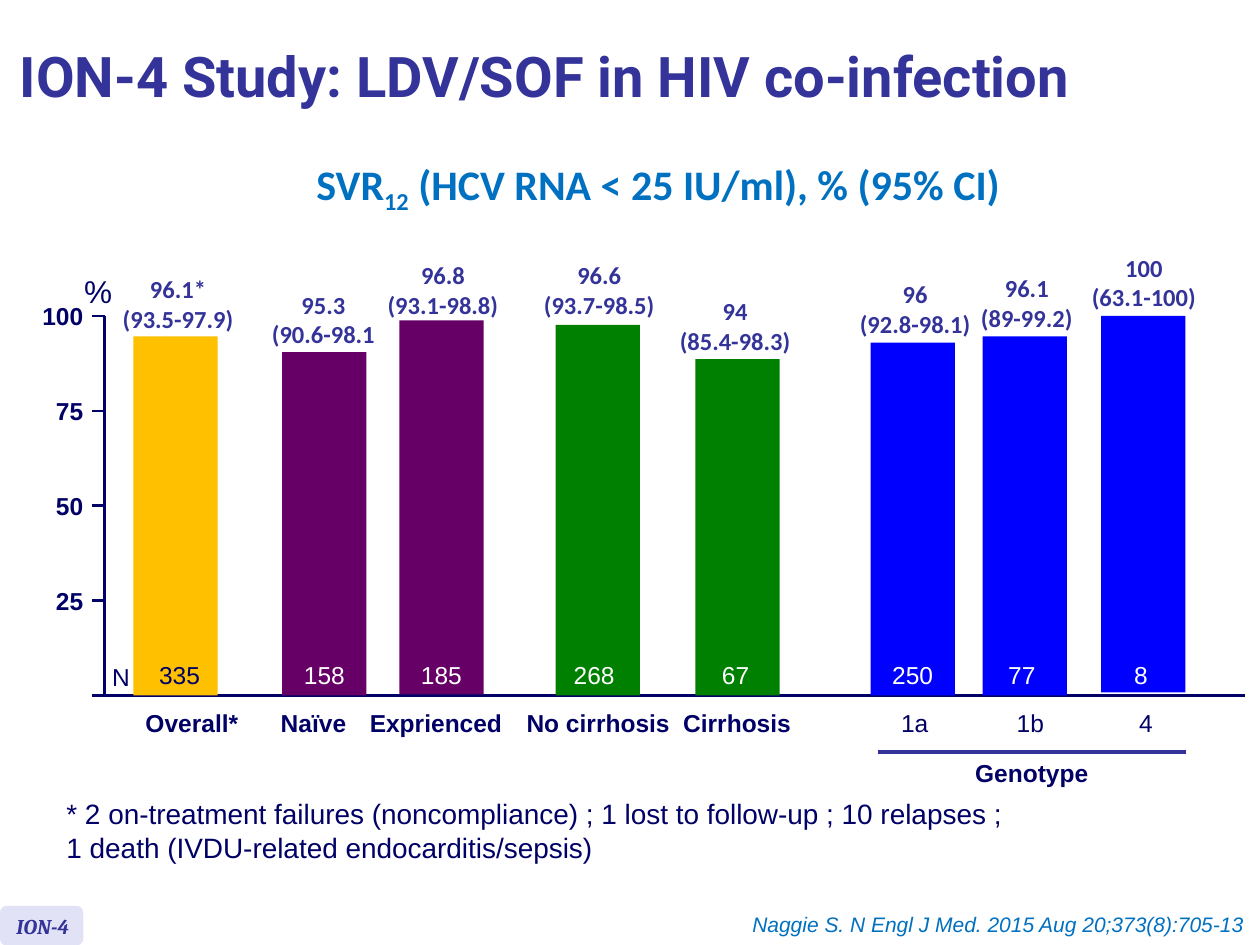
import pptx
import pptx.util
import pptx.dml.color
import pptx.enum.shapes
import pptx.enum.text
import lxml.etree
from dataclasses import dataclass

Cm = pptx.util.Cm
Pt = pptx.util.Pt
RGB = pptx.dml.color.RGBColor.from_string
SHAPE = pptx.enum.shapes.MSO_SHAPE
ALIGN = pptx.enum.text.PP_ALIGN
ANCHOR = pptx.enum.text.MSO_ANCHOR


@dataclass(frozen=True)
class Theme:
    navy: str = "000066"
    indigo: str = "333399"
    sky: str = "0070C0"
    white: str = "FFFFFF"
    badge: str = "E2E2F6"
    amber: str = "FFC000"
    purple: str = "660066"
    green: str = "008000"
    blue: str = "0000FF"
    title: int = 32
    heading: int = 24
    unit: int = 18
    note: int = 16
    label: int = 14
    small: int = 12


T = Theme()

TITLE = "ION-4 Study: LDV/SOF in HIV co-infection"
HEADING = "SVR12 (HCV RNA < 25 IU/ml), % (95% CI)"
NOTE = ("* 2 on-treatment failures (noncompliance) ; 1 lost to follow-up ; 10 relapses ;"
        "\v1 death (IVDU-related endocarditis/sepsis)")
CITATION = "Naggie S. N Engl J Med. 2015 Aug 20;373(8):705-13"
TICKS = [25, 50, 75, 100]

FIELDS = ("name", "name_x", "n", "n_x", "rate", "ci", "rate_x", "rate_y",
          "left", "top", "bottom", "color")
ROWS = [
    ("Overall*", 3.87, "335", 3.62, "96.1*", "(93.5-97.9)", 3.59, 5.28, 2.69, 6.78, 14.02, T.amber),
    ("Naïve", 6.32, "158", 6.54, "95.3", "(90.6-98.1", 6.52, 5.59, 5.69, 7.1, 14.02, T.purple),
    ("Exprienced", 8.79, "185", 8.9, "96.8", "(93.1-98.8)", 8.93, 5, 8.05, 6.46, 14, T.purple),
    ("No cirrhosis", 12.06, "268", 11.98, "96.6", "(93.7-98.5)", 12.08, 5, 11.2, 6.55, 14.02, T.green),
    ("Cirrhosis", 14.86, "67", 14.83, "94", "(85.4-98.3)", 14.82, 5.72, 14.02, 7.24, 14.02, T.green),
    ("1a", 18.44, "250", 18.4, "96", "(92.8-98.1)", 18.45, 5.38, 17.55, 6.91, 14.02, T.blue),
    ("1b", 20.77, "77", 20.6, "96.1", "(89-99.2)", 20.7, 5.26, 19.81, 6.78, 14.02, T.blue),
    ("4", 23.1, "8", 23, "100", "(63.1-100)", 23.06, 4.85, 22.2, 6.37, 13.96, T.blue),
]
GENOTYPES = ("1a", "1b", "4")

AXIS_X, TICK_X, AXIS_END = 2.11, 1.85, 25.1
BASE_Y, SCALE = 14.02, 7.65 / 100
BAR_W, LABEL_W, LINE_H = 1.7, 3.4, 0.86

prs = pptx.Presentation()
prs.slide_width, prs.slide_height = Cm(25.4), Cm(19.05)
s = prs.slides.add_slide(prs.slide_layouts[6])


def text(content, x, y, w, h, size=T.label, color=T.navy, font="Arial", bold=False,
         italic=False, align=ALIGN.LEFT, anchor=ANCHOR.TOP, inset=(0.25, 0.13),
         wrap=False, spacing=None, sub=None):
    sp = s.shapes.add_textbox(Cm(x), Cm(y), Cm(w), Cm(h))
    tf = sp.text_frame
    tf.word_wrap, tf.vertical_anchor = wrap, anchor
    tf.margin_left = tf.margin_right = Cm(inset[0])
    tf.margin_top = tf.margin_bottom = Cm(inset[1])
    for i, line in enumerate(content.split("\n")):
        p = tf.add_paragraph() if i else tf.paragraphs[0]
        p.alignment, p.line_spacing = align, spacing
        if sub:
            for part in line.partition(sub):
                p.add_run().text = part
        else:
            p.text = line
        for r in p.runs:
            r.font.name, r.font.size = font, Pt(size)
            r.font.bold, r.font.italic = bold, italic
            r.font.color.rgb = RGB(color)
            if sub and r.text == sub:
                r.font._element.set("baseline", "-25000")
    return sp


def centered(content, x, y, h=LINE_H, **fmt):
    return text(content, x - LABEL_W / 2, y, LABEL_W, h, align=ALIGN.CENTER, **fmt)


def box(kind, x, y, w, h, color):
    sp = s.shapes.add_shape(kind, Cm(x), Cm(y), Cm(w), Cm(h))
    sp.shadow.inherit = False
    sp.fill.solid()
    sp.fill.fore_color.rgb = RGB(color)
    sp.line.fill.background()
    return sp


def rule(x1, y1, x2, y2, color=T.navy, width=1.5):
    c = s.shapes.add_connector(pptx.enum.shapes.MSO_CONNECTOR.STRAIGHT,
                               Cm(x1), Cm(y1), Cm(x2), Cm(y2))
    c.line.color.rgb, c.line.width = RGB(color), Pt(width)
    lxml.etree.SubElement(c._element.spPr, pptx.oxml.ns.qn("a:effectLst"))
    return c


text(TITLE, 0.15, 0.08, 24.97, 3.07, size=T.title, color=T.indigo, font="Roboto",
     bold=True, anchor=ANCHOR.MIDDLE, wrap=True, spacing=0.85)
text(HEADING, 6.02, 3.38, 14.5, 1.12, size=T.heading, color=T.sky, font="Calibri",
     bold=True, align=ALIGN.CENTER, spacing=Pt(23.6), sub="12")

for value in TICKS:
    y = BASE_Y - value * SCALE
    rule(TICK_X, y, AXIS_X, y)
    text(str(value), 0.68, y - 0.3, 1, 0.6, bold=True, align=ALIGN.RIGHT,
         anchor=ANCHOR.MIDDLE, inset=(0, 0))
rule(AXIS_X, BASE_Y - 100 * SCALE, AXIS_X, BASE_Y)
rule(TICK_X, BASE_Y, AXIS_END, BASE_Y)
centered("%", 1.98, 5.36, 1.02, size=T.unit)
centered("N", 2.44, 13.21)

groups = [dict(zip(FIELDS, row)) for row in ROWS]
for g in groups:
    box(SHAPE.RECTANGLE, g["left"], g["top"], BAR_W, g["bottom"] - g["top"], g["color"])
for g in groups:
    centered(f"{g['rate']}\n{g['ci']}", g["rate_x"], g["rate_y"], 1.7, color=T.indigo,
             font="Calibri", bold=True, inset=(0.25, 0.25))
    centered(g["n"], g["n_x"], 13.18, color=T.navy if g["color"] == T.amber else T.white)
    centered(g["name"], g["name_x"], 14.15, bold=g["name"] not in GENOTYPES)

rule(17.7, 15.16, 23.9, 15.16, color=T.indigo, width=2.25)
centered("Genotype", 20.8, 15.16, bold=True)

text(NOTE, 1.09, 15.93, 20.19, 1.63, size=T.note, wrap=True)
box(SHAPE.ROUNDED_RECTANGLE, 0, 18.26, 1.68, 0.8, T.badge)
text("ION-4", 0.08, 18.29, 2.06, 0.76, size=T.small, color=T.indigo, font="Cambria",
     bold=True, italic=True, wrap=True)
text(CITATION, 14.71, 18.24, 10.62, 0.76, size=T.small, color=T.sky, italic=True,
     align=ALIGN.RIGHT, wrap=True)

prs.save("out.pptx")
